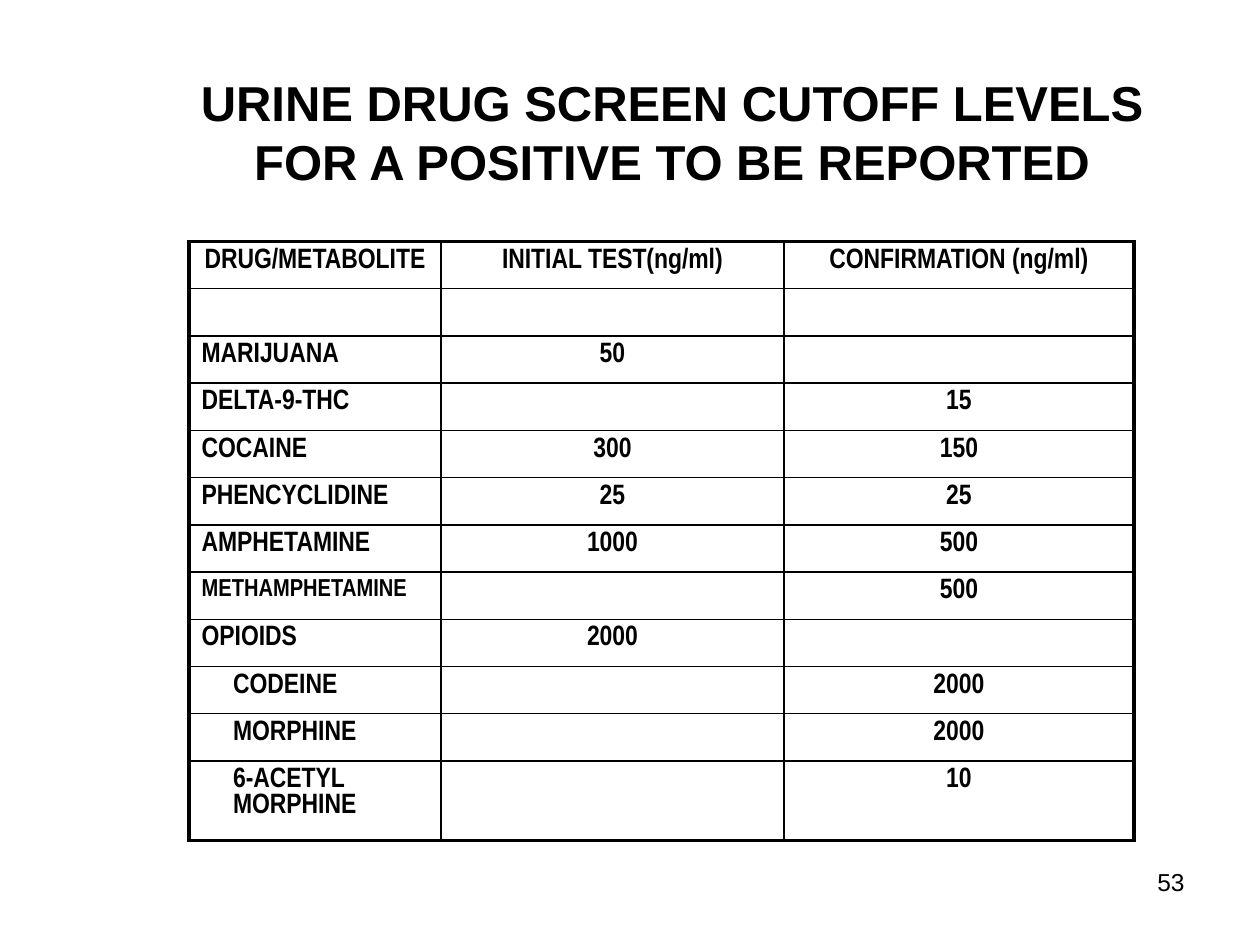
"""Build a slide with a table of urine drug screen cutoff levels."""
from dataclasses import dataclass

import lxml.etree
import pptx
import pptx.dml.color
import pptx.enum.text
import pptx.oxml.ns
import pptx.util

Pt = pptx.util.Pt
qn = pptx.oxml.ns.qn
ALIGN = pptx.enum.text.PP_ALIGN
ANCHOR = pptx.enum.text.MSO_ANCHOR
COLORS = {"ink": "000000", "line": "000000"}
THICK, THIN = 2.25, 1
WIDTHS = (144, 196, 200)
HIGH, LAST = 27, 44


@dataclass
class Drug:
    name: str
    first: str = ""
    confirm: str = ""
    size: float = 16
    indent: float = 0


DRUGS = [
    Drug("DRUG/METABOLITE", "INITIAL TEST(ng/ml)", "CONFIRMATION (ng/ml)"),
    Drug(""),
    Drug("MARIJUANA", "50"),
    Drug("DELTA-9-THC", "", "15"),
    Drug("COCAINE", "300", "150"),
    Drug("PHENCYCLIDINE", "25", "25"),
    Drug("AMPHETAMINE", "1000", "500"),
    Drug("METHAMPHETAMINE", "", "500", size=14),
    Drug("OPIOIDS", "2000"),
    Drug("CODEINE", "", "2000", indent=18),
    Drug("MORPHINE", "", "2000", indent=18),
    Drug("6-ACETYL\nMORPHINE", "", "10", indent=18),
]


def style(frame, font: str, size: float, bold: bool, align) -> None:
    """Format every run of a text frame."""
    for para in frame.paragraphs:
        para.alignment = align
        for run in para.runs:
            run.font.name = font
            run.font.size = Pt(size)
            run.font.bold = bold
            run.font.color.rgb = pptx.dml.color.RGBColor.from_string(COLORS["ink"])


def border(cell, sides: dict[str, float]) -> None:
    """Draw the four sides of a cell in the given widths."""
    props = cell._tc.get_or_add_tcPr()
    for side, width in sides.items():
        line = lxml.etree.SubElement(props, qn(f"a:ln{side}"), w=str(Pt(width)))
        fill = lxml.etree.SubElement(line, qn("a:solidFill"))
        lxml.etree.SubElement(fill, qn("a:srgbClr"), val=COLORS["line"])


def write(cell, text: str, size: float, align, indent: float = 0) -> None:
    """Fill a cell with text, or size its empty line."""
    frame = cell.text_frame
    frame.text = text
    style(frame, "Arial Narrow", size, True, align)
    for para in frame.paragraphs:
        if indent:
            para._p.get_or_add_pPr().set("marL", str(Pt(indent)))
        if not text:
            lxml.etree.SubElement(para._p, qn("a:endParaRPr"), sz=str(size * 100))


def add_levels(slide, drugs: list[Drug]) -> None:
    """Add the table of cutoff levels."""
    end, edge = len(drugs) - 1, len(WIDTHS) - 1
    table = slide.shapes.add_table(
        len(drugs), len(WIDTHS), Pt(108), Pt(138),
        Pt(sum(WIDTHS)), Pt(HIGH * end + LAST)).table
    table.first_row = table.horz_banding = False
    for col, width in zip(table.columns, WIDTHS):
        col.width = Pt(width)
    for r, drug in enumerate(drugs):
        table.rows[r].height = Pt(LAST if r == end else HIGH)
        for c, text in enumerate((drug.name, drug.first, drug.confirm)):
            cell = table.cell(r, c)
            left = c == 0 and r > 0
            write(cell, text, 16 if c else drug.size,
                  ALIGN.LEFT if left else ALIGN.CENTER, 0 if c else drug.indent)
            border(cell, {"L": THICK if c == 0 else THIN,
                          "R": THICK if c == edge else THIN,
                          "T": THICK if r == 0 else THIN,
                          "B": THICK if r == end else THIN})
            cell.fill.background()


def add_title(slide, text: str) -> None:
    """Fill and place the title."""
    title = slide.shapes.title
    title.left, title.top, title.width, title.height = Pt(84), Pt(30), Pt(600), Pt(90)
    frame = title.text_frame
    frame.text = text
    frame.auto_size = pptx.enum.text.MSO_AUTO_SIZE.NONE
    frame.vertical_anchor = ANCHOR.MIDDLE
    style(frame, "Arial", 28, True, ALIGN.CENTER)


def add_number(slide, text: str) -> None:
    """Add the page number."""
    frame = slide.shapes.add_textbox(Pt(516), Pt(492), Pt(168), Pt(37.5)).text_frame
    frame.word_wrap = True
    frame.text = text
    style(frame, "Arial", 14, False, ALIGN.RIGHT)


def main() -> None:
    """Build and save the slide."""
    deck = pptx.Presentation()
    deck.slide_width, deck.slide_height = Pt(720), Pt(540)
    slide = deck.slides.add_slide(deck.slide_layouts[5])
    add_number(slide, "53")
    add_title(slide, "URINE DRUG SCREEN CUTOFF LEVELS FOR A POSITIVE TO BE REPORTED")
    add_levels(slide, DRUGS)
    deck.save("out.pptx")


if __name__ == "__main__":
    main()
